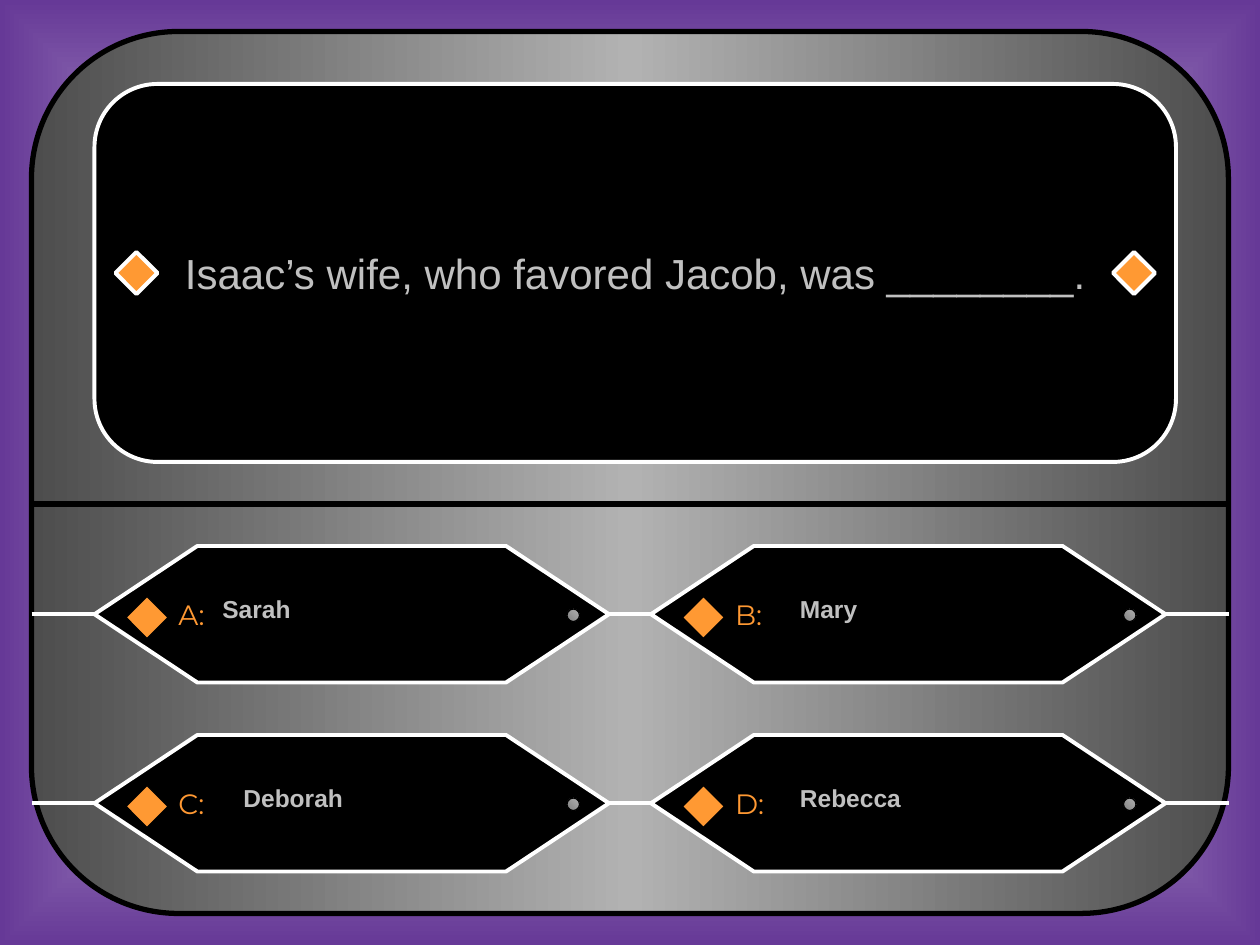
import pptx
import pptx.dml.color
import pptx.enum.shapes
import pptx.enum.text
import pptx.util
from lxml import etree

SHAPES = pptx.enum.shapes.MSO_SHAPE
ANCHOR = pptx.enum.text.MSO_ANCHOR
ALIGN = pptx.enum.text.PP_ALIGN
DRAWING = "http://schemas.openxmlformats.org/drawingml/2006/main"

# All lengths are in grid units: twelve to the inch, 120 columns by 90 rows.
COLUMNS, ROWS = 120, 90
BLACK, WHITE, ORANGE, SILVER = "000000", "FFFFFF", "FF9933", "C0C0C0"
THIN, MEDIUM, THICK = 0.75, 2.25, 3


def grid(units):
    return pptx.util.Inches(units / 12)


def color(hex_string):
    return pptx.dml.color.RGBColor.from_string(hex_string)


def add_element(parent, tag, **attributes):
    return etree.SubElement(parent, f"{{{DRAWING}}}{tag}", attributes)


def set_gradient(fill, owner, stops, angle=None):
    """Fill with (percent, colour) stops, linear at angle or else from the centre."""
    fill.gradient()
    gradient = owner.find(f".//{{{DRAWING}}}gradFill")
    for child in list(gradient):
        gradient.remove(child)
    stop_list = add_element(gradient, "gsLst")
    for position, hex_string in stops:
        stop = add_element(stop_list, "gs", pos=str(position * 1000))
        add_element(stop, "srgbClr", val=hex_string)
    if angle is None:
        center = add_element(gradient, "path", path="shape")
        add_element(center, "fillToRect", l="50000", t="50000", r="50000", b="50000")
    else:
        add_element(gradient, "lin", ang=str(angle * 60000), scaled="1")


def add_shape(slide, kind, box, fill=BLACK, line=BLACK, width=THIN, angle=0):
    """Add a preset shape; fill is a hex string or a list of gradient stops."""
    shape = slide.shapes.add_shape(kind, *map(grid, box))
    shape.shadow.inherit = False
    if isinstance(fill, str):
        shape.fill.solid()
        shape.fill.fore_color.rgb = color(fill)
    else:
        set_gradient(shape.fill, shape._element, fill, angle)
    shape.line.color.rgb = color(line)
    shape.line.width = pptx.util.Pt(width)
    return shape


def add_line(slide, left, right, y, line=WHITE, width=MEDIUM):
    connector = slide.shapes.add_connector(
        pptx.enum.shapes.MSO_CONNECTOR.STRAIGHT,
        grid(left), grid(y), grid(right), grid(y))
    connector.line.color.rgb = color(line)
    connector.line.width = pptx.util.Pt(width)
    add_element(connector._element.spPr, "effectLst")


def write_text(shape, text, size, font="Arial", fill=SILVER, bold=False,
               align=ALIGN.LEFT, anchor=ANCHOR.MIDDLE, wrap=True, inset=None):
    frame = shape.text_frame
    frame.word_wrap = wrap
    frame.vertical_anchor = anchor
    if inset is not None:
        frame.margin_left = frame.margin_right = grid(inset)
        frame.margin_top = frame.margin_bottom = grid(inset)
    paragraph = frame.paragraphs[0]
    paragraph.alignment = align
    run = paragraph.add_run()
    run.text = text
    run.font.name = font
    run.font.size = pptx.util.Pt(size)
    run.font.bold = bold
    run.font.color.rgb = color(fill)


def add_panel(slide, left, top, width, height):
    """Draw the metal panel with its dividing line."""
    add_shape(slide, SHAPES.FLOWCHART_ALTERNATE_PROCESS, (left, top, width, height),
              fill=[(0, "4D4D4D"), (50, "B2B2B2"), (100, "4D4D4D")], width=THICK)
    add_line(slide, left, left + width, top + 45, line=BLACK, width=THICK)


def add_question(slide, text, left, top, width, height):
    frame = add_shape(slide, SHAPES.FLOWCHART_ALTERNATE_PROCESS,
                      (left, top, width, height), line=WHITE, width=MEDIUM)
    write_text(frame, text, 24, align=ALIGN.CENTER, wrap=False)
    size = 4
    for x in (left + 2, left + width - 2 - size):
        add_shape(slide, SHAPES.DIAMOND, (x, top + (height - size) / 2, size, size),
                  fill=ORANGE, line=WHITE, width=MEDIUM)


def add_answer(slide, letter, text, indent, left, top, width, height):
    add_shape(slide, SHAPES.FLOWCHART_PREPARATION, (left, top, width, height),
              line=WHITE, width=MEDIUM)
    add_shape(slide, SHAPES.DIAMOND, (left + 3, top + 4.8, 4, 4), fill=ORANGE)
    add_shape(slide, SHAPES.FLOWCHART_CONNECTOR, (left + width - 4, top + 6, 1.2, 1.2),
              fill=[(0, "808080"), (100, "B2B2B2")], angle=315)
    label = add_shape(slide, SHAPES.RECTANGLE, (left + 8, top + 4.8, 4, 3.4))
    label.fill.background()
    label.line.fill.background()
    write_text(label, f"{letter}:", 16, font="Montserrat", fill=ORANGE, inset=0)
    answer = add_shape(slide, SHAPES.RECTANGLE, (left + indent, top + 4, 28, 4.1))
    answer.fill.background()
    answer.line.fill.background()
    write_text(answer, text, 14, bold=True, anchor=ANCHOR.TOP)


def add_answer_row(slide, answers, left, top, width, height):
    """Place two answers in the row, joined to each other and to its edges."""
    margin, gap = 6, 4
    answer_width = 49
    middle = top + height / 2
    starts = [left + margin + i * (answer_width + gap) for i in range(len(answers))]
    add_line(slide, left, starts[0], middle)
    add_line(slide, starts[0] + answer_width, starts[1], middle)
    add_line(slide, starts[1] + answer_width, left + width, middle)
    for start, (letter, text, indent) in zip(starts, answers):
        add_answer(slide, letter, text, indent, start, top, answer_width, height)


def main():
    presentation = pptx.Presentation()
    presentation.slide_width, presentation.slide_height = grid(COLUMNS), grid(ROWS)
    slide = presentation.slides.add_slide(presentation.slide_layouts[6])
    set_gradient(slide.background.fill, slide._element, [(0, WHITE), (100, "663997")])

    add_panel(slide, 3, 3, COLUMNS - 6, ROWS - 6)
    add_question(slide, "Isaac’s wife, who favored Jacob, was ________.", 9, 8, 103, 36)
    answer_rows = [
        [("A", "Sarah", 11), ("B", "Mary", 13)],
        [("C", "Deborah", 13), ("D", "Rebecca", 13)],
    ]
    for i, answers in enumerate(answer_rows):
        add_answer_row(slide, answers, 3, 52 + 18 * i, COLUMNS - 6, 13)

    presentation.save("out.pptx")


if __name__ == "__main__":
    main()
